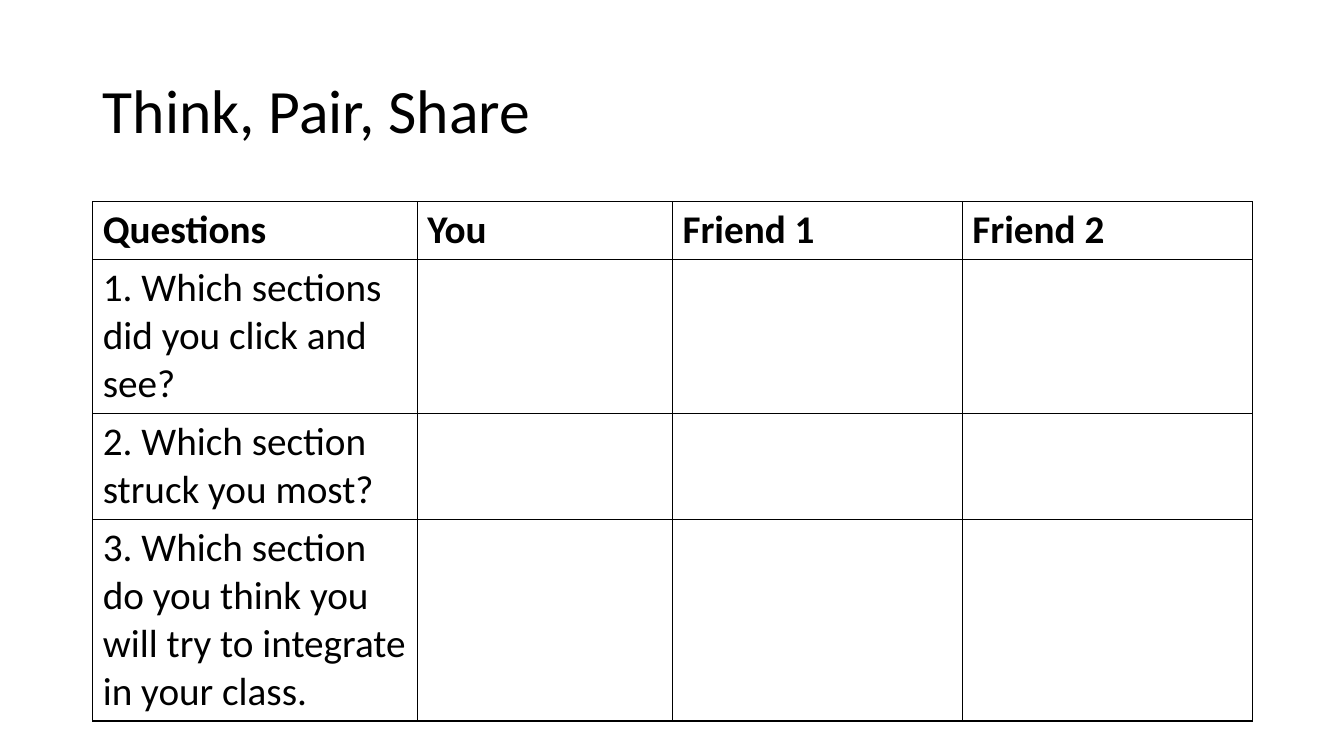
from dataclasses import dataclass

from lxml import etree
from pptx import Presentation
from pptx.dml.color import RGBColor
from pptx.enum.text import MSO_ANCHOR, PP_ALIGN
from pptx.oxml.ns import qn
from pptx.util import Inches, Pt

LEFT = PP_ALIGN.LEFT
MIDDLE = MSO_ANCHOR.MIDDLE
TITLE_ONLY = 5


@dataclass(frozen=True)
class Theme:
    font: str = "Calibri"
    ink: str = "000000"
    title_size: int = 44
    table_size: int = 28
    border_width: int = 1


THEME = Theme()
SLIDE_WIDTH, SLIDE_HEIGHT = 13.33, 7.5
MARGIN, CONTENT_WIDTH = 0.92, 11.5
TITLE_BOX = (MARGIN, 0.4, CONTENT_WIDTH, 1.45)
TABLE_BOX = (MARGIN, 2, CONTENT_WIDTH, 5.15)

COLUMN_SHARES = (0.28, 0.22, 0.25, 0.25)
HEADINGS = ("Questions", "You", "Friend 1", "Friend 2")
# Each question with the number of lines it fills in its column
QUESTIONS = (
    ("1. Which sections did you click and see?", 3),
    ("2. Which section struck you most?", 2),
    ("3. Which section do you think you will try to integrate in your class.", 4),
)
CELL_PADDING = 0.1


def add_run(paragraph, text, size, bold=False):
    run = paragraph.add_run()
    run.text = text
    run.font.name = THEME.font
    run.font.size = Pt(size)
    run.font.bold = bold
    run.font.color.rgb = RGBColor.from_string(THEME.ink)


def add_title(slide, box, text):
    title = slide.shapes.title
    title.left, title.top, title.width, title.height = map(Inches, box)
    title.text_frame.vertical_anchor = MIDDLE
    title.text_frame.word_wrap = True
    paragraph = title.text_frame.paragraphs[0]
    paragraph.alignment = LEFT
    paragraph.line_spacing = 0.9
    add_run(paragraph, text, THEME.title_size)


def format_cell(cell):
    """Give a cell four plain borders and no fill."""
    properties = cell._tc.get_or_add_tcPr()
    for side in ("a:lnL", "a:lnR", "a:lnT", "a:lnB"):
        line = etree.SubElement(properties, qn(side), w=str(Pt(THEME.border_width)))
        fill = etree.SubElement(line, qn("a:solidFill"))
        etree.SubElement(fill, qn("a:srgbClr"), val=THEME.ink)
    cell.fill.background()


def add_question_table(slide, box):
    """Size columns by share and rows by their number of text lines."""
    left, top, width, height = box
    rows = [(HEADINGS, 1)] + [((question,), lines) for question, lines in QUESTIONS]
    frame = slide.shapes.add_table(
        len(rows), len(HEADINGS), *map(Inches, box))
    table = frame.table
    table.first_row = False
    table.horz_banding = False
    for column, share in zip(table.columns, COLUMN_SHARES):
        column.width = Inches(width * share)

    total_lines = sum(lines for _, lines in rows)
    line_height = (height - CELL_PADDING * len(rows)) / total_lines
    for row_index, (texts, lines) in enumerate(rows):
        row = table.rows[row_index]
        row.height = Inches(lines * line_height + CELL_PADDING)
        for cell in row.cells:
            format_cell(cell)
        for cell, text in zip(row.cells, texts):
            add_run(cell.text_frame.paragraphs[0], text, THEME.table_size,
                    bold=row_index == 0)


def main():
    presentation = Presentation()
    presentation.slide_width = Inches(SLIDE_WIDTH)
    presentation.slide_height = Inches(SLIDE_HEIGHT)
    slide = presentation.slides.add_slide(presentation.slide_layouts[TITLE_ONLY])
    add_title(slide, TITLE_BOX, "Think, Pair, Share")
    add_question_table(slide, TABLE_BOX)
    presentation.save("out.pptx")


if __name__ == "__main__":
    main()
